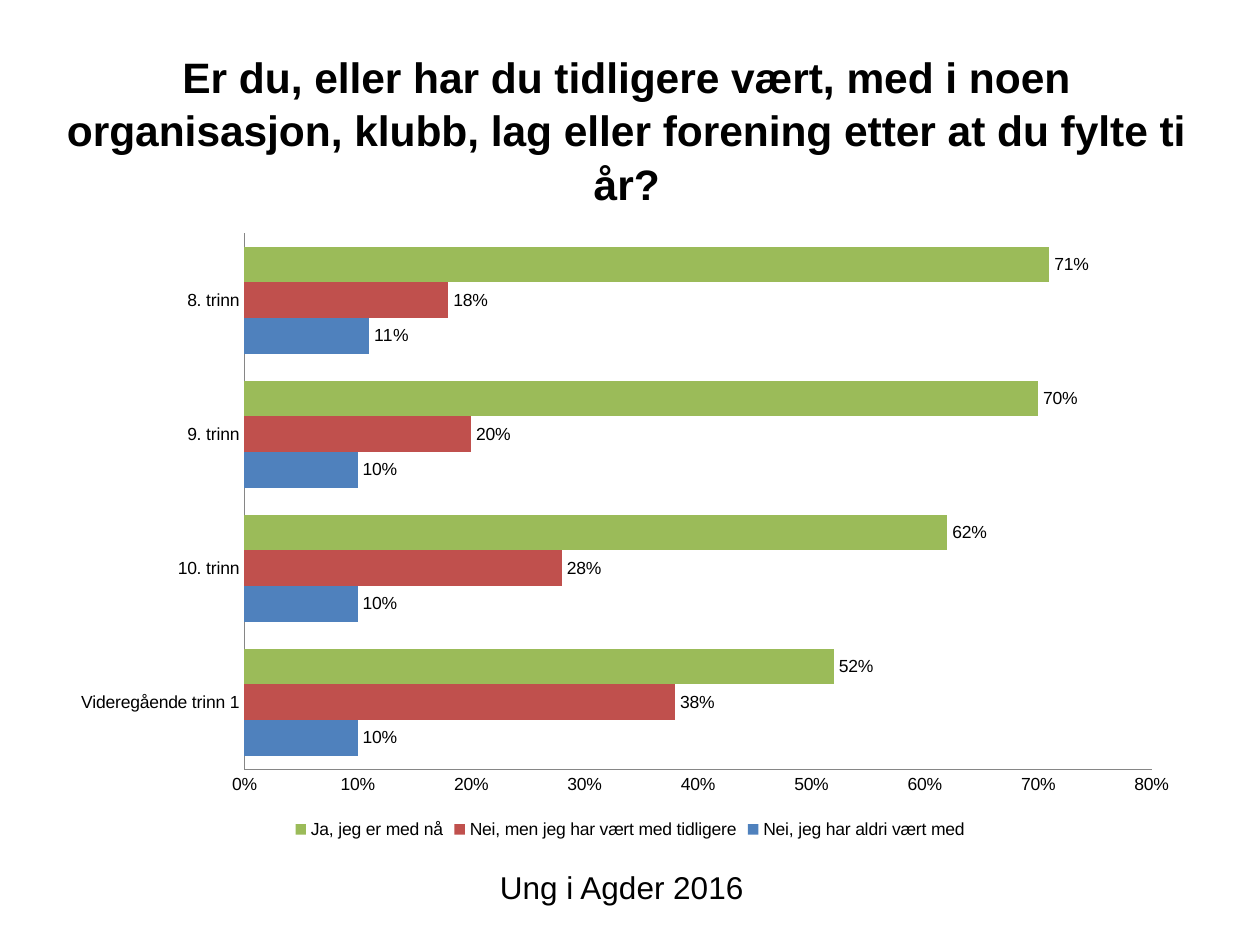
from typing import NamedTuple

from lxml import etree
from pptx import Presentation
from pptx import util as u
from pptx.chart.data import CategoryChartData
from pptx.dml.color import RGBColor
from pptx.enum import chart as ch, text as t
from pptx.oxml.ns import qn

FONT = "Arial"
BLACK, GREY = "000000", "868686"


class Answer(NamedTuple):
    name: str
    shares: tuple[float, ...]
    color: str


GRADES = ["Videregående trinn 1", "10. trinn", "9. trinn", "8. trinn"]
ANSWERS = [
    Answer("Nei, jeg har aldri vært med", (0.1, 0.1, 0.1, 0.11), "4F81BD"),
    Answer("Nei, men jeg har vært med tidligere", (0.38, 0.28, 0.2, 0.18), "C0504D"),
    Answer("Ja, jeg er med nå", (0.52, 0.62, 0.7, 0.71), "9BBB59"),
]


def rgb(value: str) -> RGBColor:
    return RGBColor.from_string(value)


def set_all(target, values: dict) -> None:
    for name, value in values.items():
        setattr(target, name, value)


def style_font(font, size: float, bold: bool = False) -> None:
    set_all(font, {"name": FONT, "size": u.Pt(size), "bold": bold})
    font.color.rgb = rgb(BLACK)


def style_axis(axis) -> None:
    set_all(axis, {"major_tick_mark": ch.XL_TICK_MARK.NONE,
                   "minor_tick_mark": ch.XL_TICK_MARK.NONE,
                   "has_major_gridlines": False})
    axis.format.line.color.rgb = rgb(GREY)


def place_plot(chart, x: float, y: float, w: float, h: float) -> None:
    """Fix the inner plot area as fractions of the chart."""
    area = chart.plots[0]._element.getparent()
    for old in area.findall(qn("c:layout")):
        area.remove(old)
    layout = etree.Element(qn("c:layout"))
    area.insert(0, layout)
    manual = etree.SubElement(layout, qn("c:manualLayout"))
    settings = {"layoutTarget": "inner", "xMode": "edge", "yMode": "edge",
                "x": x, "y": y, "w": w, "h": h}
    for tag, value in settings.items():
        etree.SubElement(manual, qn(f"c:{tag}")).set("val", str(value))


def add_answer_chart(slide) -> None:
    data = CategoryChartData(number_format="0%")
    data.categories = GRADES
    for answer in ANSWERS:
        data.add_series(answer.name, answer.shares)
    chart = slide.shapes.add_chart(
        ch.XL_CHART_TYPE.BAR_CLUSTERED, u.Cm(1.27), u.Cm(4.45),
        u.Cm(22.86), u.Cm(12.57), data).chart
    style_font(chart.font, 10)
    set_all(chart, {"has_title": False, "has_legend": True})
    set_all(chart.legend, {"position": ch.XL_LEGEND_POSITION.BOTTOM,
                           "include_in_layout": False})

    # Axes
    style_axis(chart.category_axis)
    style_axis(chart.value_axis)
    set_all(chart.value_axis, {"minimum_scale": 0, "maximum_scale": 0.8,
                               "major_unit": 0.1})
    set_all(chart.value_axis.tick_labels, {"number_format": "0%",
                                           "number_format_is_linked": False})

    # Bars and their labels
    plot = chart.plots[0]
    set_all(plot, {"gap_width": 75, "overlap": 0, "vary_by_categories": False})
    for series, answer in zip(plot.series, ANSWERS):
        series.format.fill.solid()
        series.format.fill.fore_color.rgb = rgb(answer.color)
        set_all(series.data_labels, {
            "show_value": True, "number_format": "0%",
            "number_format_is_linked": False,
            "position": ch.XL_LABEL_POSITION.OUTSIDE_END})
        style_font(series.data_labels.font, 10)
    place_plot(chart, 0.16, 0.02, 0.8, 0.86)


def main() -> None:
    prs = Presentation()
    set_all(prs, {"slide_width": u.Cm(25.4), "slide_height": u.Cm(19.05)})
    slide = prs.slides.add_slide(prs.slide_layouts[5])

    # Question
    question = slide.shapes.title
    set_all(question, {"left": u.Cm(0.61), "top": u.Cm(0.76),
                       "width": u.Cm(24.05), "height": u.Cm(3.18)})
    set_all(question.text_frame, {
        "text": "Er du, eller har du tidligere vært, med i noen organisasjon, "
                "klubb, lag eller forening etter at du fylte ti år?",
        "vertical_anchor": t.MSO_ANCHOR.MIDDLE, "word_wrap": True,
        "auto_size": t.MSO_AUTO_SIZE.NONE,
        "margin_top": u.Cm(0.5), "margin_bottom": 0})
    heading = question.text_frame.paragraphs[0]
    set_all(heading, {"alignment": t.PP_ALIGN.CENTER, "line_spacing": 1.04})
    style_font(heading.runs[0].font, 24.3, bold=True)

    add_answer_chart(slide)

    # Survey name
    survey = slide.shapes.add_textbox(u.Cm(9.83), u.Cm(17.37), u.Cm(5.74), u.Cm(1.02))
    set_all(survey.text_frame, {"text": "Ung i Agder 2016", "word_wrap": True,
                                "auto_size": t.MSO_AUTO_SIZE.SHAPE_TO_FIT_TEXT})
    style_font(survey.text_frame.paragraphs[0].runs[0].font, 18)

    prs.save("out.pptx")


if __name__ == "__main__":
    main()
